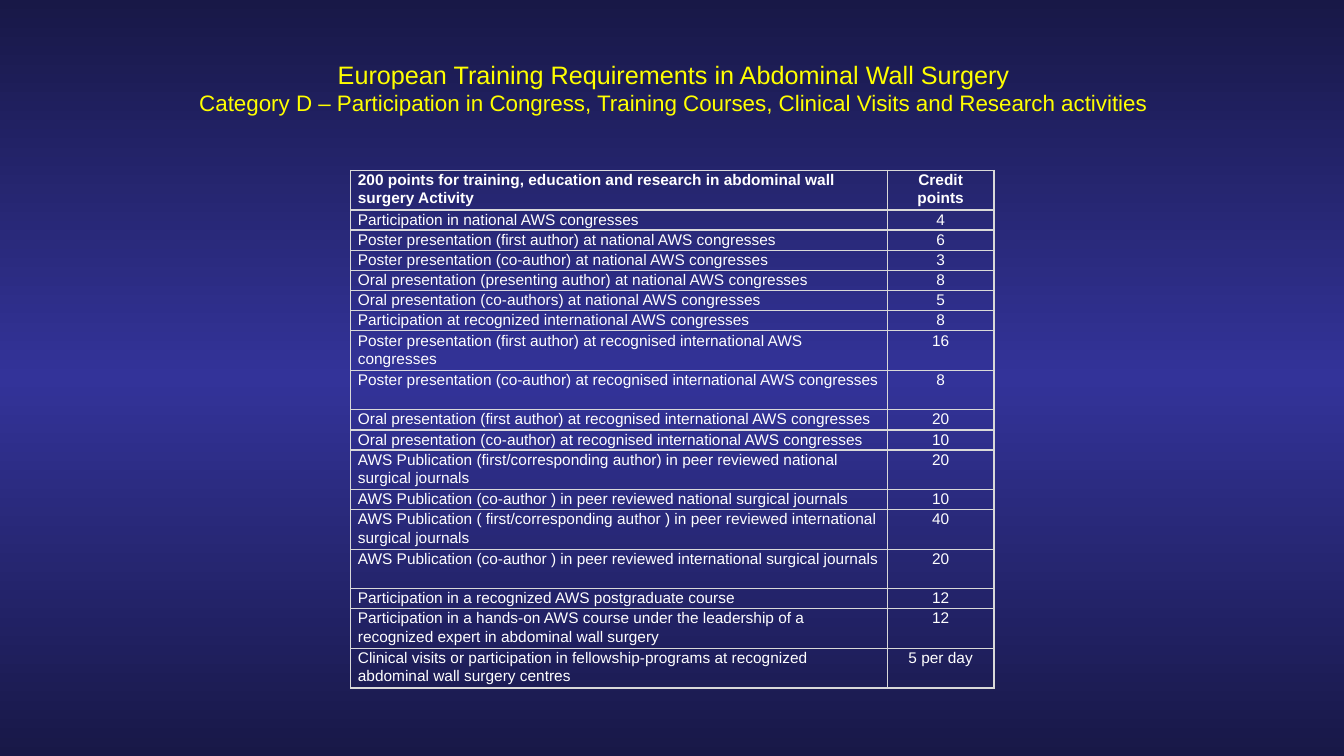
from copy import deepcopy

from lxml import etree
from pptx import Presentation, util as u
from pptx.dml.color import RGBColor
from pptx.enum import text
from pptx.oxml import ns

YELLOW = RGBColor(0xFF, 0xFF, 0x00)
WHITE = RGBColor(0xFF, 0xFF, 0xFF)
NAVY = RGBColor(0x18, 0x18, 0x47)
INDIGO = RGBColor(0x33, 0x33, 0x99)
GREY = RGBColor(0xD9, 0xD9, 0xD9)

COL_WIDTHS = 5.32, 1.06
LINE_HEIGHTS = {1: 0.2, 2: 0.39}

# Activity, credit points, lines of text in the row
ACTIVITIES = [
    ("200 points for training, education and research in abdominal wall surgery Activity", "Credit points", 2),
    ("Participation in national AWS congresses", "4", 1),
    ("Poster presentation (first author) at national AWS congresses", "6", 1),
    ("Poster presentation (co-author) at national AWS congresses", "3", 1),
    ("Oral presentation (presenting author) at national AWS congresses", "8", 1),
    ("Oral presentation (co-authors) at national AWS congresses", "5", 1),
    ("Participation at recognized international AWS congresses", "8", 1),
    ("Poster presentation (first author) at recognised international AWS congresses", "16", 2),
    ("Poster presentation (co-author) at recognised international AWS congresses", "8", 2),
    ("Oral presentation (first author) at recognised international AWS congresses", "20", 1),
    ("Oral presentation (co-author) at recognised international AWS congresses", "10", 1),
    ("AWS Publication (first/corresponding author) in peer reviewed national surgical journals", "20", 2),
    ("AWS Publication (co-author ) in peer reviewed national surgical journals", "10", 1),
    ("AWS Publication ( first/corresponding author ) in peer reviewed international surgical journals", "40", 2),
    ("AWS Publication (co-author ) in peer reviewed international surgical journals", "20", 2),
    ("Participation in a recognized AWS postgraduate course", "12", 1),
    ("Participation in a hands-on AWS course under the leadership of a recognized expert in abdominal wall surgery",
     "12", 2),
    ("Clinical visits or participation in fellowship-programs at recognized abdominal wall surgery centres",
     "5 per day", 2),
]


def add_run(p, words, size, color, bold=False):
    r = p.add_run()
    r.text = words
    r.font.name = "Arial"
    r.font.size = u.Pt(size)
    r.font.bold = bold
    r.font.color.rgb = color


def add_borders(cell):
    """Draw a thin grey line on all four sides; call before setting the fill."""
    tc_pr = cell._tc.get_or_add_tcPr()
    for side in "LRTB":
        ln = etree.SubElement(tc_pr, ns.qn(f"a:ln{side}"), w=str(u.Pt(1)))
        fill = etree.SubElement(ln, ns.qn("a:solidFill"))
        etree.SubElement(fill, ns.qn("a:srgbClr"), val=str(GREY))


prs = Presentation()
prs.slide_width, prs.slide_height = u.Inches(13.33), u.Inches(7.5)
s = prs.slides.add_slide(prs.slide_layouts[6])

# Background: dark edges, lighter middle
bg = s.background.fill
bg.gradient()
bg.gradient_angle = 90
stop_list = s.element.find(".//" + ns.qn("a:gsLst"))
stop_list.append(deepcopy(stop_list[0]))
for stop, position, color in zip(bg.gradient_stops, (0, 0.5, 1), (NAVY, INDIGO, NAVY)):
    stop.position = position
    stop.color.rgb = color

# Title
title = s.shapes.add_textbox(u.Inches(1.19), u.Inches(0.54), u.Inches(10.98), u.Inches(0.67))
tf = title.text_frame
tf.word_wrap = True
p = tf.paragraphs[0]
p.alignment = text.PP_ALIGN.CENTER
add_run(p, "European Training Requirements in Abdominal Wall Surgery", 18, YELLOW)
p.add_line_break()
add_run(p, "Category D – Participation in Congress, Training Courses, Clinical Visits and Research activities",
        16, YELLOW)

# Credit table
heights = [LINE_HEIGHTS[lines] for _, _, lines in ACTIVITIES]
table = s.shapes.add_table(len(ACTIVITIES), len(COL_WIDTHS), u.Inches(3.48), u.Inches(1.69),
                           u.Inches(sum(COL_WIDTHS)), u.Inches(sum(heights))).table
table.first_row = table.horz_banding = False
for column, width in zip(table.columns, COL_WIDTHS):
    column.width = u.Inches(width)
for i, (activity, points, _) in enumerate(ACTIVITIES):
    table.rows[i].height = u.Inches(heights[i])
    for j, words in enumerate((activity, points)):
        cell = table.cell(i, j)
        cell.margin_left = cell.margin_right = u.Inches(0.07)
        cell.margin_top = cell.margin_bottom = 0
        add_borders(cell)
        cell.fill.background()
        p = cell.text_frame.paragraphs[0]
        p.alignment = text.PP_ALIGN.CENTER if j else text.PP_ALIGN.LEFT
        p.line_spacing = 1.07
        p.space_after = u.Pt(8)
        add_run(p, words, 11, WHITE, bold=i == 0)

prs.save("out.pptx")
